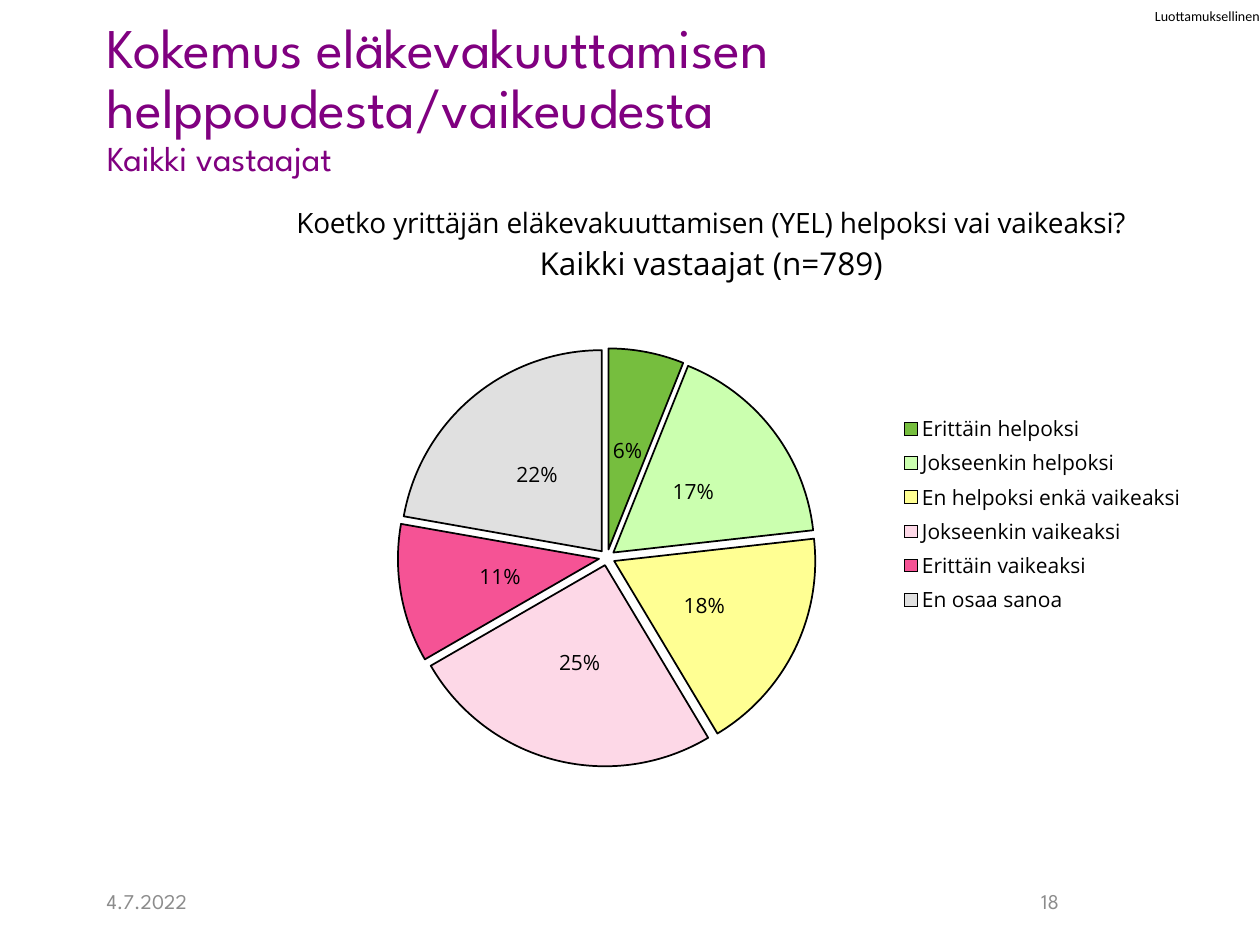
from pptx import Presentation
from pptx.chart.data import CategoryChartData
from pptx.dml.color import RGBColor
from pptx.enum.chart import XL_CHART_TYPE, XL_LABEL_POSITION, XL_LEGEND_POSITION
from pptx.enum.text import MSO_ANCHOR, MSO_AUTO_SIZE, PP_ALIGN
from pptx.oxml import parse_xml
from pptx.oxml.ns import nsdecls
from pptx.util import Cm, Pt

PURPLE = RGBColor(0x80, 0x00, 0x80)
GREY = RGBColor(0x8C, 0x8C, 0x8C)
BLACK = RGBColor(0x00, 0x00, 0x00)
HEADING_FONT = "League Spartan"
CHART_FONT = "Open Sans"

ANSWERS = [
    ("Erittäin helpoksi", 0.06, RGBColor(0x54, 0xAE, 0x0E)),
    ("Jokseenkin helpoksi", 0.17, RGBColor(0xBF, 0xFF, 0x9B)),
    ("En helpoksi enkä vaikeaksi", 0.18, RGBColor(0xFF, 0xFF, 0x79)),
    ("Jokseenkin vaikeaksi", 0.25, RGBColor(0xFD, 0xCF, 0xE1)),
    ("Erittäin vaikeaksi", 0.11, RGBColor(0xF3, 0x29, 0x7B)),
    ("En osaa sanoa", 0.22, RGBColor(0xD9, 0xD9, 0xD9)),
]


def set_layout(sibling, x, y, width=None, height=None, inner=False):
    """Place a chart part, in fractions of the chart; sibling follows its layout."""
    for old in sibling.getparent().xpath("./c:layout"):
        old.getparent().remove(old)
    items = [("layoutTarget", "inner")] if inner else []
    items += [("xMode", "edge"), ("yMode", "edge"), ("x", x), ("y", y)]
    if width:
        items += [("w", width), ("h", height)]
    body = "".join(f'<c:{tag} val="{value}"/>' for tag, value in items)
    sibling.addprevious(parse_xml(
        f'<c:layout {nsdecls("c")}><c:manualLayout>{body}</c:manualLayout></c:layout>'))


def add_small_text(text, left, top, width, height, alignment, size, font, color, margin):
    box = slide.shapes.add_textbox(Cm(left), Cm(top), Cm(width), Cm(height))
    frame = box.text_frame
    frame.word_wrap = True
    frame.vertical_anchor = MSO_ANCHOR.MIDDLE
    frame.margin_left = frame.margin_right = Cm(margin)
    frame.margin_top = frame.margin_bottom = Cm(margin / 2)
    paragraph = frame.paragraphs[0]
    paragraph.text = text
    paragraph.alignment = alignment
    paragraph.font.size = Pt(size)
    paragraph.font.name = font
    paragraph.font.color.rgb = color


presentation = Presentation()
presentation.slide_width = Cm(25.4)
presentation.slide_height = Cm(19.05)
slide = presentation.slides.add_slide(presentation.slide_layouts[5])

# Classification, date and page number
add_small_text("Luottamuksellinen", 22.58, 0, 2.82, 0.64, PP_ALIGN.RIGHT, 8, "Calibri", BLACK, 0)
add_small_text("4.7.2022", 1.9, 17.65, 5.31, 1.02, PP_ALIGN.LEFT, 12, HEADING_FONT, GREY, 0.25)
add_small_text("18", 18.21, 17.65, 5.92, 1.02, PP_ALIGN.CENTER, 12, HEADING_FONT, GREY, 0.25)

# Title
title = slide.shapes.title
title.left, title.top, title.width, title.height = Cm(1.9), Cm(0.99), Cm(22.23), Cm(2.74)
title.text_frame.auto_size = MSO_AUTO_SIZE.NONE
title.text_frame.vertical_anchor = MSO_ANCHOR.BOTTOM
paragraph = title.text_frame.paragraphs[0]
paragraph.alignment = PP_ALIGN.LEFT
paragraph.line_spacing = 0.9
paragraph.font.name = HEADING_FONT
paragraph.font.color.rgb = PURPLE
heading = paragraph.add_run()
heading.text = "Kokemus eläkevakuuttamisen helppoudesta/vaikeudesta"
heading.font.size = Pt(32)
paragraph.add_line_break()
subheading = paragraph.add_run()
subheading.text = "Kaikki vastaajat"
subheading.font.size = Pt(20)

# Pie chart
chart_data = CategoryChartData(number_format="0%")
chart_data.categories = [name for name, _, _ in ANSWERS]
chart_data.add_series("Kaikki vastaajat", [share for _, share, _ in ANSWERS])
chart = slide.shapes.add_chart(
    XL_CHART_TYPE.PIE, Cm(1.9), Cm(3.73), Cm(22.23), Cm(13.28), chart_data).chart
chart.font.name = CHART_FONT
chart.font.size = Pt(12)
chart.font.color.rgb = BLACK

chart.has_title = True
title_frame = chart.chart_title.text_frame
question = title_frame.paragraphs[0]
respondents = title_frame.add_paragraph()
for paragraph, text, size in [
    (question, "Koetko yrittäjän eläkevakuuttamisen (YEL) helpoksi vai vaikeaksi?", 16),
    (respondents, "Kaikki vastaajat (n=789)", 18),
]:
    paragraph.alignment = PP_ALIGN.CENTER
    run = paragraph.add_run()
    run.text = text
    run.font.name = CHART_FONT
    run.font.size = Pt(size)
    run.font.bold = False
    run.font.color.rgb = BLACK

chart.has_legend = True
chart.legend.position = XL_LEGEND_POSITION.RIGHT
chart.legend.include_in_layout = False
chart.legend.font.name = CHART_FONT
chart.legend.font.size = Pt(12)
chart.legend.font.color.rgb = BLACK

plot = chart.plots[0]
plot.vary_by_categories = True
plot.has_data_labels = True
labels = plot.data_labels
labels.show_value = True
labels.show_percentage = False
labels.number_format = "0%"
labels.number_format_is_linked = False
labels.position = XL_LABEL_POSITION.CENTER
labels.font.name = CHART_FONT
labels.font.size = Pt(12)
labels.font.color.rgb = BLACK

series = plot.series[0]
for index, (_, _, color) in enumerate(ANSWERS):
    slice_format = series.points[index].format
    slice_format.fill.solid()
    slice_format.fill.fore_color.rgb = color
    slice_format.line.color.rgb = BLACK
    slice_format.line.width = Pt(1)

chart_space = chart.element
for fill_color in chart_space.xpath(".//c:dPt/c:spPr/a:solidFill/a:srgbClr"):
    fill_color.append(parse_xml(f'<a:alpha {nsdecls("a")} val="80000"/>'))
chart_space.xpath(".//c:dPt")[0].addprevious(
    parse_xml(f'<c:explosion {nsdecls("c")} val="4"/>'))

set_layout(chart_space.xpath(".//c:title/c:overlay")[0], 0.18, 0.02)
set_layout(chart_space.xpath(".//c:legend/c:overlay")[0], 0.73, 0.34, 0.26, 0.32)
set_layout(chart_space.xpath(".//c:pieChart")[0], 0.275, 0.248, 0.38, 0.635, inner=True)

presentation.save("out.pptx")
